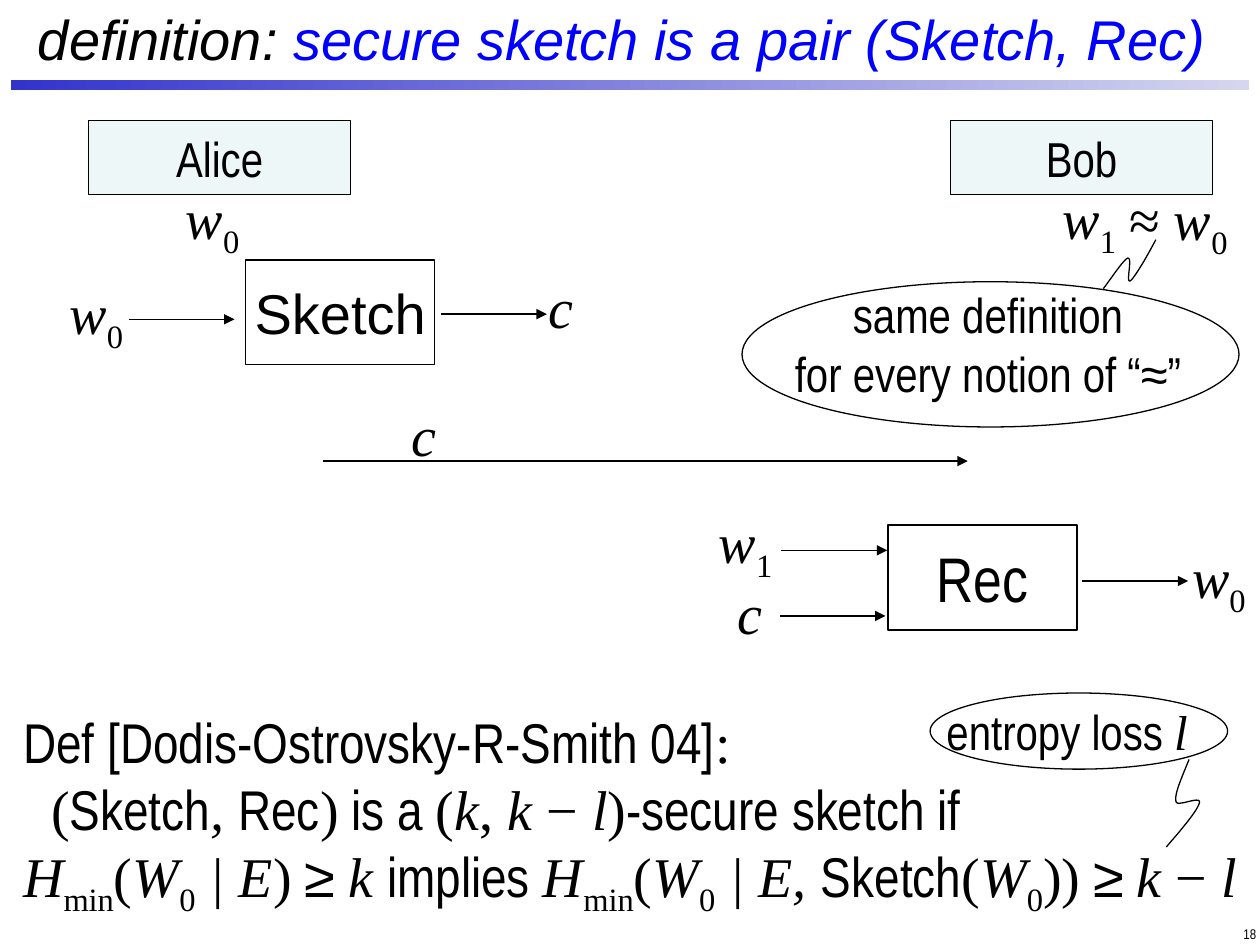
"""Build the slide that defines a secure sketch as a pair of procedures."""
from pptx import Presentation
from pptx.dml.color import RGBColor
from pptx.enum.shapes import MSO_CONNECTOR, MSO_SHAPE
from pptx.enum.text import MSO_ANCHOR, MSO_AUTO_SIZE, PP_ALIGN
from pptx.oxml.ns import qn
from pptx.util import Pt
from lxml.etree import SubElement

LEFT, CENTER, RIGHT = PP_ALIGN.LEFT, PP_ALIGN.CENTER, PP_ALIGN.RIGHT
BLACK, BLUE = "000000", "0000FF"
STYLES = {
    "narrow": {"name": "Arial Narrow", "italic": False},
    "sans": {"name": "Arial", "italic": False},
    "slanted": {"name": "Arial", "italic": True},
    "serif": {"name": "Times New Roman", "italic": False},
    "math": {"name": "Times New Roman", "italic": True},
    "sub": {"name": "Times New Roman", "italic": False},
}

W0 = [("w", "math"), ("0", "sub")]
W1 = [("w", "math"), ("1", "sub")]
C = [("c", "math")]
H_MIN = [("H", "math"), ("min", "sub"), ("(", "serif"), ("W", "math"), ("0", "sub")]
AT_LEAST_K = [(" ≥ ", "narrow"), ("k ", "math")]
MINUS_L = [("− ", "serif"), ("l", "math")]

TITLE = [("definition:", "slanted"), (" secure sketch is a pair (Sketch, Rec)", "slanted", BLUE)]
DEFINITION = [
    (0, [("Def [Dodis-Ostrovsky-R-Smith 04]", "narrow"), (":", "serif")]),
    (16, [("(", "serif"), ("Sketch", "narrow"), (", ", "math"), ("Rec", "narrow"),
          (")", "serif"), (" is a ", "narrow"), ("(", "serif"), ("k", "math"),
          (", ", "serif"), ("k ", "math"), *MINUS_L, (")", "serif"),
          ("-secure sketch if", "narrow")]),
    (0, [*H_MIN, (" | E", "math"), (")", "serif"), *AT_LEAST_K, ("implies ", "narrow"),
         *H_MIN, (" | E, ", "math"), ("Sketch", "narrow"), ("(", "serif"),
         ("W", "math"), ("0", "sub"), ("))", "serif"), *AT_LEAST_K, *MINUS_L]),
]
LABELS = [
    (98, 101.5, 47, CENTER, W0), (636, 102, 72.5, RIGHT, [("≈ ", "serif"), *W0]),
    (599, 101.5, 47, CENTER, W1), (31.5, 155.5, 47, CENTER, W0),
    (306, 152, 29, CENTER, C), (227.5, 225.5, 29, CENTER, C),
    (402.5, 286.5, 47, CENTER, W1), (414, 327, 29, CENTER, C),
    (673, 306.5, 47, CENTER, W0),
]
BOXES = [
    (50.5, 69, 150, 42, "BBE0E3", "Alice", "narrow", 28),
    (543, 69, 150, 42, "BBE0E3", "Bob", "narrow", 28),
    (140.5, 148.5, 108, 60, None, "Sketch", "sans", 32),
    (507.5, 300, 108, 60, None, "Rec", "narrow", 36),
]
ARROWS = [(184.5, 263.5, 368.5), (73.5, 182.5, 60.5), (252, 179.5, 60.5),
          (446.5, 314.5, 60.5), (445.5, 352, 60.5), (618.5, 332, 60.5)]
CALLOUTS = [
    {"text": (444, 159, 241, 75), "ellipse": (424, 161, 284, 83),
     "lines": [[("same definition", "narrow")], [("for every notion of “≈”", "narrow")]],
     "curve": [(630.5, 165), (636.5, 157), (642, 148.5), (644.5, 147.5), (647.5, 147),
               (643, 162.5), (646, 160.5), (648, 159), (654.5, 148.5), (660.5, 137)]},
    {"text": (514, 397.5, 191.5, 41), "ellipse": (531.5, 396, 170, 43.5),
     "lines": [[("entropy loss ", "narrow"), ("l", "math")]],
     "curve": [(666.5, 484), (676, 473), (684.5, 463), (685.5, 458.5), (686, 454.5),
               (672.5, 461.5), (672, 458), (671, 453.5), (675.5, 444), (679.5, 434)]},
]


def color(value):
    return RGBColor.from_string(value)


def place(shape, left, top, width, height):
    for name, value in zip(("left", "top", "width", "height"), (left, top, width, height)):
        setattr(shape, name, Pt(value))


def write(frame, lines, size, align=LEFT, before=0, wrap=False, anchor=MSO_ANCHOR.TOP):
    settings = {"word_wrap": wrap, "auto_size": MSO_AUTO_SIZE.NONE, "vertical_anchor": anchor}
    for name, value in settings.items():
        setattr(frame, name, value)
    for index, spans in enumerate(lines):
        para = frame.add_paragraph() if index else frame.paragraphs[0]
        para.alignment, para.space_before = align, Pt(0 if index else before)
        for text, style, *tint in spans:
            span = para.add_run()
            span.text = text
            for name, value in {**STYLES[style], "size": Pt(size)}.items():
                setattr(span.font, name, value)
            span.font.color.rgb = color(tint[0] if tint else BLACK)
            if style == "sub":
                span.font._element.set("baseline", "-25000")


def add_text(page, area, lines, size, **options):
    box = page.shapes.add_textbox(*map(Pt, area))
    write(box.text_frame, lines, size, **options)


def outline(shape, fill=None):
    shape.shadow.inherit = False
    shape.line.color.rgb, shape.line.width = color(BLACK), Pt(0.75)
    if fill:
        shape.fill.solid()
        shape.fill.fore_color.rgb = color(fill)
        tone = shape._element.spPr.find(qn("a:solidFill"))[0]
        SubElement(tone, qn("a:alpha"), val="25000")
    else:
        shape.fill.background()


def add_arrow(page, left, top, length):
    arrow = page.shapes.add_connector(
        MSO_CONNECTOR.STRAIGHT, Pt(left), Pt(top), Pt(left + length), Pt(top))
    arrow.line.color.rgb, arrow.line.width = color(BLACK), Pt(0.75)
    SubElement(arrow.line._get_or_add_ln(), qn("a:tailEnd"), type="triangle", w="med", len="med")
    SubElement(arrow._element.spPr, qn("a:effectLst"))


def bezier(points, t):
    weights = ((1 - t) ** 3, 3 * t * (1 - t) ** 2, 3 * t * t * (1 - t), t ** 3)
    return tuple(Pt(sum(w * p[axis] for w, p in zip(weights, points))) for axis in (0, 1))


def add_curve(page, points, steps=12):
    builder = page.shapes.build_freeform(*map(Pt, points[0]))
    builder.add_line_segments(
        [bezier(points[first:first + 4], step / steps)
         for first in range(0, len(points) - 1, 3) for step in range(1, steps + 1)], close=False)
    outline(builder.convert_to_shape())


def add_bar(page):
    bar = page.shapes.add_shape(MSO_SHAPE.RECTANGLE, *map(Pt, (6, 45.5, 708, 6)))
    bar.shadow.inherit = False
    bar.line.fill.background()
    bar.fill.gradient()
    bar.fill.gradient_angle = 0
    for stop, (position, tint) in zip(bar.fill.gradient_stops, ((0, "3333CC"), (1, "D6D6EF"))):
        stop.position, stop.color.rgb = position, color(tint)


def main():
    deck = Presentation()
    deck.slide_width, deck.slide_height = Pt(720), Pt(540)
    page = deck.slides.add_slide(deck.slide_layouts[1])
    title, body = page.placeholders
    add_bar(page)
    place(title, 14.5, 5, 710.5, 34)
    write(title.text_frame, [TITLE], 32, wrap=True, anchor=MSO_ANCHOR.MIDDLE)
    place(body, 6, 400.5, 743.5, 115)
    write(body.text_frame, [spans for _, spans in DEFINITION], 32, before=4, wrap=True)
    for para, (indent, _) in zip(body.text_frame.paragraphs, DEFINITION):
        properties = para._p.get_or_add_pPr()
        properties.set("marL", str(Pt(indent)))
        properties.set("indent", "0")
        SubElement(properties, qn("a:buNone"))
    for left, top, width, align, spans in LABELS:
        add_text(page, (left, top, width, 46), [spans], 32, align=align, before=4)
    for *area, fill, name, style, size in BOXES:
        box = page.shapes.add_shape(MSO_SHAPE.RECTANGLE, *map(Pt, area))
        outline(box, fill)
        write(box.text_frame, [[(name, style)]], size, align=CENTER, anchor=MSO_ANCHOR.MIDDLE)
    for arrow in ARROWS:
        add_arrow(page, *arrow)
    for callout in CALLOUTS:
        add_text(page, callout["text"], callout["lines"], 28, align=CENTER, before=3, wrap=True)
        outline(page.shapes.add_shape(MSO_SHAPE.OVAL, *map(Pt, callout["ellipse"])))
        add_curve(page, callout["curve"])
    add_text(page, (575.5, 515.5, 149.5, 36), [[("18", "narrow")]], 8,
             align=RIGHT, anchor=MSO_ANCHOR.MIDDLE)
    deck.save("out.pptx")


if __name__ == "__main__":
    main()
